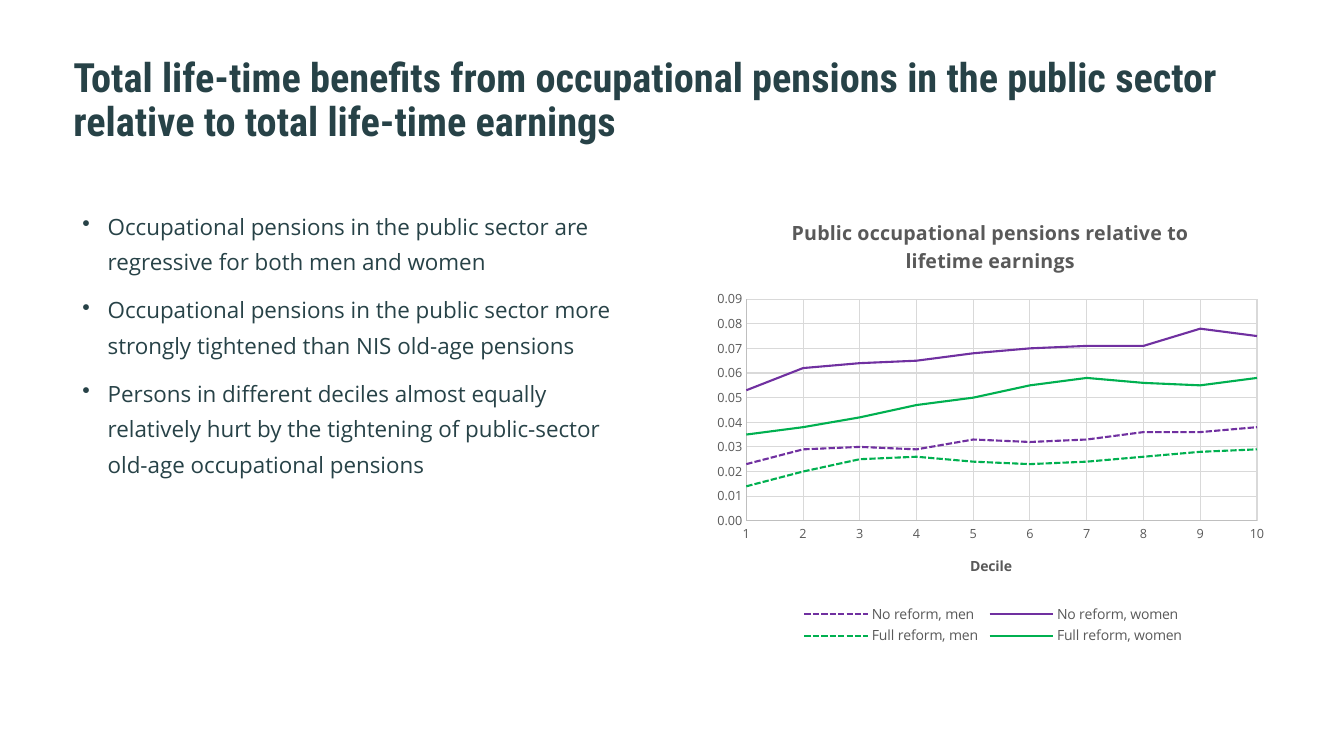
from lxml import etree
from pptx import Presentation
from pptx.chart.data import XyChartData
from pptx.dml.color import RGBColor
from pptx.enum.chart import XL_CHART_TYPE, XL_LEGEND_POSITION, XL_TICK_MARK
from pptx.enum.dml import MSO_LINE
from pptx.enum.text import MSO_ANCHOR
from pptx.oxml.ns import qn
from pptx.util import Inches, Pt

LINES = XL_CHART_TYPE.XY_SCATTER_LINES_NO_MARKERS
BOTTOM = XL_LEGEND_POSITION.BOTTOM
NO_TICK = XL_TICK_MARK.NONE
DASH = MSO_LINE.SQUARE_DOT
MIDDLE, TOP = MSO_ANCHOR.MIDDLE, MSO_ANCHOR.TOP

COLORS = {"ink": "274247", "label": "595959", "axis": "BFBFBF",
          "grid": "D9D9D9", "none": "7030A0", "full": "00B050"}
HEAD, BODY = "Roboto Condensed", "Open Sans"
COLS, ROWS = 160, 90

TITLE = ("Total life-time benefits from occupational pensions in the public "
         "sector relative to total life-time earnings")
POINTS = [
    "Occupational pensions in the public sector are regressive for both men and women",
    "Occupational pensions in the public sector more strongly tightened than NIS "
    "old-age pensions",
    "Persons in different deciles almost equally relatively hurt by the tightening "
    "of public-sector old-age occupational pensions",
]
SERIES = [
    ("No reform, men", "none", True,
     [.023, .029, .03, .029, .033, .032, .033, .036, .036, .038]),
    ("No reform, women", "none", False,
     [.053, .062, .064, .065, .068, .07, .071, .071, .078, .075]),
    ("Full reform, men", "full", True,
     [.014, .02, .025, .026, .024, .023, .024, .026, .028, .029]),
    ("Full reform, women", "full", False,
     [.035, .038, .042, .047, .05, .055, .058, .056, .055, .058]),
]


def rgb(name):
    """Return a palette colour."""
    return RGBColor.from_string(COLORS[name])


def style_font(font, size, color="label", name=BODY, bold=False):
    """Set the format of a font."""
    font.size, font.name, font.bold = Pt(size), name, bold
    font.color.rgb = rgb(color)


def add_text(p, text, spacing=None, after=None, bullet=None, **fmt):
    """Write one formatted run into a paragraph."""
    if bullet:
        pPr = p._p.get_or_add_pPr()
        pPr.set("marL", str(Inches(.25)))
        pPr.set("indent", str(-Inches(.25)))
        etree.SubElement(pPr, qn("a:buChar")).set("char", bullet)
    if spacing:
        p.line_spacing = spacing
    if after:
        p.space_after = Pt(after)
    r = p.add_run()
    r.text = text
    style_font(r.font, **fmt)


def style_line(line, color, width=.75):
    """Set the colour and width of a line."""
    line.color.rgb = rgb(color)
    line.width = Pt(width)


def place(element, index, target=None, **shares):
    """Lay out a chart part by shares of the chart's size."""
    for old in element.findall(qn("c:layout")):
        element.remove(old)
    layout = etree.Element(qn("c:layout"))
    manual = etree.SubElement(layout, qn("c:manualLayout"))
    values = {"layoutTarget": target} if target else {}
    values.update(xMode="edge", yMode="edge", **shares)
    for tag, value in values.items():
        etree.SubElement(manual, qn(f"c:{tag}")).set("val", str(value))
    element.insert(index, layout)


class Deck:
    """Hold the presentation, its grid and the current slide."""

    def __init__(self):
        """Start a widescreen presentation with one blank slide."""
        self.prs = Presentation()
        self.prs.slide_width, self.prs.slide_height = Inches(13.33), Inches(7.5)
        self.s = self.prs.slides.add_slide(self.prs.slide_layouts[6])

    def box(self, x, y, w, h):
        """Turn columns and rows into lengths."""
        col, row = self.prs.slide_width / COLS, self.prs.slide_height / ROWS
        return int(x * col), int(y * row), int(w * col), int(h * row)

    def text(self, area, paragraphs, anchor=TOP, top=.05, **fmt):
        """Add a text box."""
        tf = self.s.shapes.add_textbox(*self.box(*area)).text_frame
        tf.word_wrap, tf.vertical_anchor = True, anchor
        tf.margin_top = Inches(top)
        for i, text in enumerate(paragraphs):
            p = tf.add_paragraph() if i else tf.paragraphs[0]
            add_text(p, text, **fmt)

    def axis(self, axis, low, high, step, number_format):
        """Format one axis of the chart."""
        axis.minimum_scale, axis.maximum_scale, axis.major_unit = low, high, step
        axis.major_tick_mark = axis.minor_tick_mark = NO_TICK
        axis.has_major_gridlines = True
        style_line(axis.major_gridlines.format.line, "grid")
        style_line(axis.format.line, "axis")
        labels = axis.tick_labels
        labels.number_format, labels.number_format_is_linked = number_format, False
        style_font(labels.font, 9)

    def chart(self, area, title, axis_title, series):
        """Add the line chart."""
        data = XyChartData()
        for name, _, _, values in series:
            points = data.add_series(name)
            for decile, value in enumerate(values, 1):
                points.add_data_point(decile, value)
        chart = self.s.shapes.add_chart(LINES, *self.box(*area), data).chart
        style_font(chart.font, 10)
        chart.has_title = True
        add_text(chart.chart_title.text_frame.paragraphs[0], title, size=14, bold=True)
        x_axis = chart.category_axis
        self.axis(x_axis, 1, 10, 1, "General")
        self.axis(chart.value_axis, 0, .09, .01, "0.00")
        x_axis.has_title = True
        add_text(x_axis.axis_title.text_frame.paragraphs[0], axis_title,
                 size=10, bold=True)
        chart.has_legend = True
        legend = chart.legend
        legend.position, legend.include_in_layout = BOTTOM, False
        style_font(legend.font, 10)
        plot = chart.plots[0]
        plot.vary_by_categories = False
        for ser, (_, color, dashed, _) in zip(plot.series, series):
            ser.smooth = False
            style_line(ser.format.line, color, 1.5)
            if dashed:
                ser.format.line.dash_style = DASH
        place(chart._chartSpace.chart.plotArea, 0, "inner", x=.07, y=.22, w=.9, h=.49)
        place(x_axis.axis_title._element, 1, x=.46, y=.78)
        place(legend._element, 1, x=.16, y=.89, w=.69, h=.1)


def main():
    """Build and save the slide."""
    deck = Deck()
    top, height, width = 23.76, 53.88, 67.56
    deck.text((7.56, 7.2, 144.12, 10.32), [TITLE], anchor=MIDDLE, top=0,
              spacing=.9, size=28.8, color="ink", name=HEAD, bold=True)
    deck.text((8.64, top, width, height), POINTS, spacing=1.32, after=9,
              bullet="•", size=16, color="ink")
    deck.chart((84.12, top, width, height),
               "Public occupational pensions relative to lifetime earnings",
               "Decile", SERIES)
    deck.prs.save("out.pptx")


if __name__ == "__main__":
    main()
